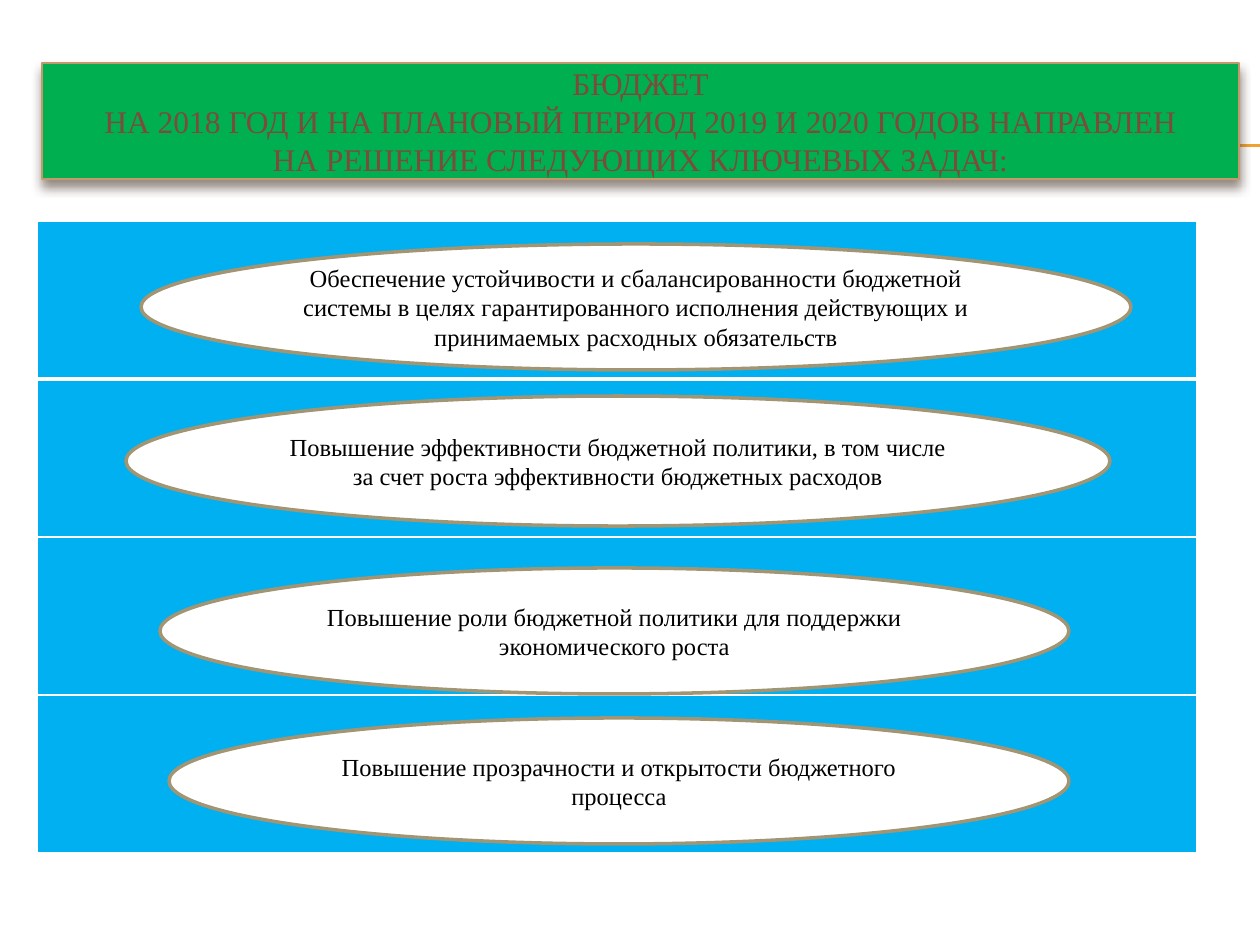
import copy
from dataclasses import dataclass

import lxml.etree
import pptx
import pptx.dml.color
import pptx.enum.shapes
import pptx.enum.text
import pptx.oxml
import pptx.oxml.ns
import pptx.util

EMU_PER_PX = 914400 / 126
FONT = "Times New Roman"
COLORS = {
    "banner": "00B050",
    "banner_edge": "C3986D",
    "banner_text": "7C4B3B",
    "shadow": "4E3B30",
    "rule": "F0A22E",
    "band": "00B0F0",
    "white": "FFFFFF",
    "goal_edge": "A19574",
    "black": "000000",
}
HEADING = (
    "БЮДЖЕТ\v"
    "НА 2018 ГОД И НА ПЛАНОВЫЙ ПЕРИОД 2019 И 2020 ГОДОВ НАПРАВЛЕН\v"
    "НА РЕШЕНИЕ СЛЕДУЮЩИХ КЛЮЧЕВЫХ ЗАДАЧ:"
)
BAND_COUNT = 4
BAND_HEIGHT = 158


@dataclass(frozen=True)
class Goal:
    text: str
    left: int
    top: int
    width: int
    height: int = 126


GOALS = [
    Goal("Обеспечение устойчивости и сбалансированности бюджетной системы в целях "
         "гарантированного исполнения действующих и принимаемых расходных обязательств",
         141, 244, 990),
    Goal("Повышение эффективности бюджетной политики, в том числе за счет роста "
         "эффективности бюджетных расходов", 126, 396, 984, 130),
    Goal("Повышение роли бюджетной политики для поддержки экономического роста",
         160, 568, 909),
    Goal("Повышение прозрачности и открытости бюджетного процесса", 169, 718, 900),
]


def px(length: int) -> int:
    return round(length * EMU_PER_PX)


def rgb(name: str) -> pptx.dml.color.RGBColor:
    return pptx.dml.color.RGBColor.from_string(COLORS[name])


def write(shape, text: str, *, size: int, color: str) -> None:
    frame = shape.text_frame
    frame.word_wrap = True
    frame.auto_size = pptx.enum.text.MSO_AUTO_SIZE.NONE
    frame.vertical_anchor = pptx.enum.text.MSO_ANCHOR.MIDDLE
    paragraph = frame.paragraphs[0]
    paragraph.text = text
    paragraph.alignment = pptx.enum.text.PP_ALIGN.CENTER
    for run in paragraph.runs:
        run.font.name = FONT
        run.font.size = pptx.util.Pt(size)
        run.font.color.rgb = rgb(color)
    run_format = paragraph.runs[0].font._element
    for line_break in paragraph._p.findall(pptx.oxml.ns.qn("a:br")):
        line_break.append(copy.deepcopy(run_format))


def paint(shape, *, fill: str, edge: str, weight: float) -> None:
    shape.fill.solid()
    shape.fill.fore_color.rgb = rgb(fill)
    shape.line.color.rgb = rgb(edge)
    shape.line.width = pptx.util.Pt(weight)


def add_heading(slide) -> None:
    title = slide.shapes.title
    title.left, title.top, title.width, title.height = map(px, (42, 63, 1197, 116))
    paint(title, fill="banner", edge="banner_edge", weight=0.79)
    write(title, HEADING, size=18, color="banner_text")
    title._element.spPr.append(pptx.oxml.parse_xml(
        f'<a:effectLst {pptx.oxml.ns.nsdecls("a")}>'
        f'<a:outerShdw blurRad="{pptx.util.Pt(6)}" dist="{pptx.util.Pt(4)}" '
        'dir="5400000" rotWithShape="0">'
        f'<a:srgbClr val="{COLORS["shadow"]}"><a:alpha val="60000"/></a:srgbClr>'
        '</a:outerShdw></a:effectLst>'))


def add_rule(slide, top: int) -> None:
    rule = slide.shapes.add_connector(
        pptx.enum.shapes.MSO_CONNECTOR.STRAIGHT, px(71), px(top), px(1260), px(top))
    rule.line.color.rgb = rgb("rule")
    rule.line.width = pptx.util.Pt(0.75)
    lxml.etree.SubElement(rule._element.spPr, pptx.oxml.ns.qn("a:effectLst"))
    slide.shapes.title._element.addprevious(rule._element)


def set_borders(cell, *, top: int, bottom: int) -> None:
    properties = cell._tc.get_or_add_tcPr()
    weights = {"lnL": 1, "lnR": 1, "lnT": top, "lnB": bottom}
    for position, (side, weight) in enumerate(weights.items()):
        properties.insert(position, pptx.oxml.parse_xml(
            f'<a:{side} {pptx.oxml.ns.nsdecls("a")} w="{pptx.util.Pt(weight)}">'
            f'<a:solidFill><a:srgbClr val="{COLORS["white"]}"/></a:solidFill>'
            f'</a:{side}>'))


def add_bands(slide) -> None:
    bands = slide.shapes.add_table(
        BAND_COUNT, 1, px(37), px(221), px(1160), px(BAND_HEIGHT * BAND_COUNT)).table
    for index in range(BAND_COUNT):
        bands.rows[index].height = px(BAND_HEIGHT)
        cell = bands.cell(index, 0)
        cell.fill.solid()
        cell.fill.fore_color.rgb = rgb("band")
        set_borders(cell, top=3 if index == 1 else 1, bottom=3 if index == 0 else 1)


def add_goal(slide, goal: Goal) -> None:
    oval = slide.shapes.add_shape(
        pptx.enum.shapes.MSO_SHAPE.OVAL,
        px(goal.left), px(goal.top), px(goal.width), px(goal.height))
    oval.shadow.inherit = False
    paint(oval, fill="white", edge="goal_edge", weight=2)
    write(oval, goal.text, size=14, color="black")


def main() -> None:
    deck = pptx.Presentation()
    deck.slide_width, deck.slide_height = px(1260), px(945)
    slide = deck.slides.add_slide(deck.slide_layouts[5])
    add_heading(slide)
    for top in (145, 146):
        add_rule(slide, top)
    add_bands(slide)
    for goal in GOALS:
        add_goal(slide, goal)
    deck.save("out.pptx")


if __name__ == "__main__":
    main()
